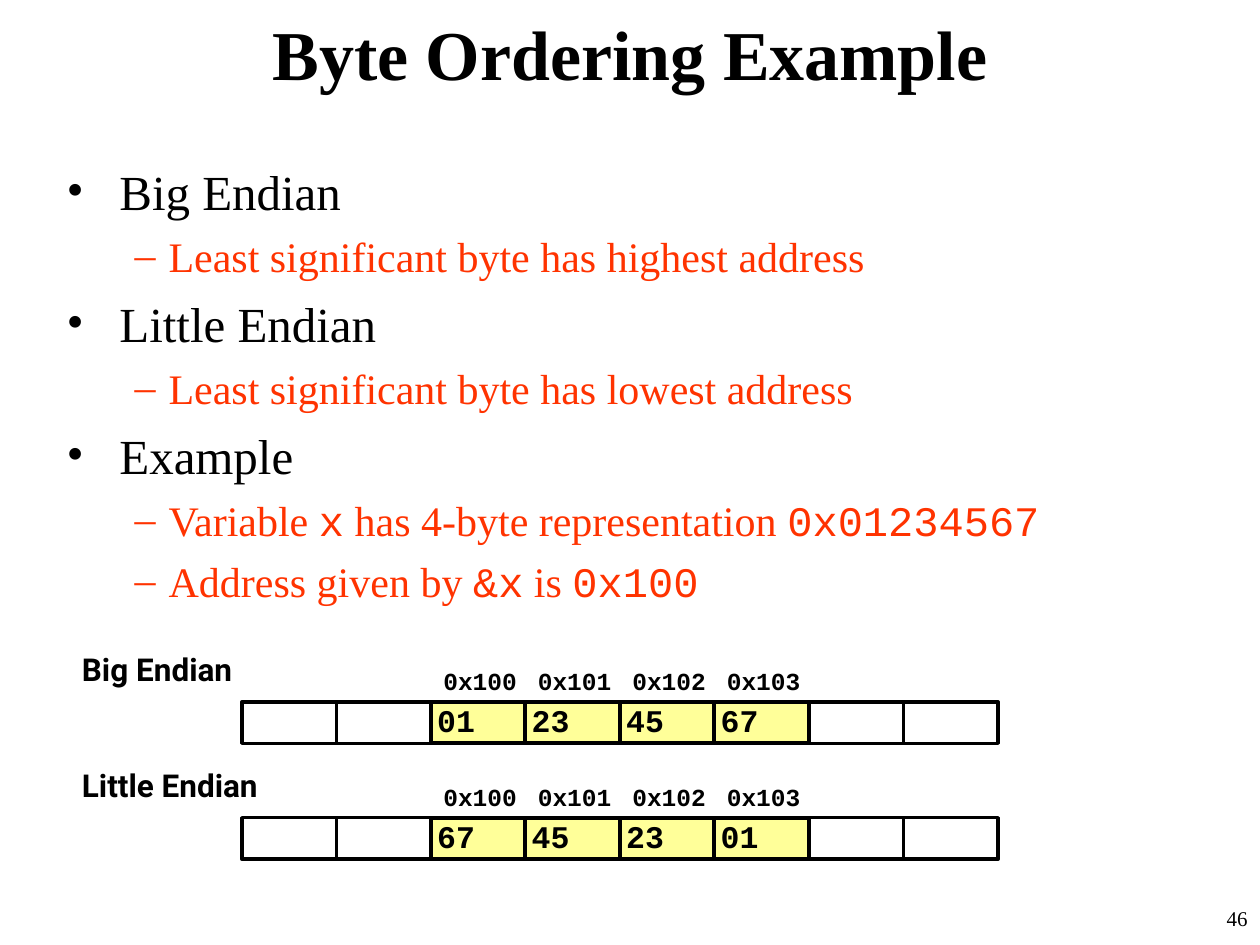
from lxml import etree
from pptx import Presentation
from pptx import util as u
from pptx.dml.color import RGBColor
from pptx.enum import shapes, text
from pptx.oxml.ns import qn

EMU_PER_PX = 9144  # 100 px to the inch
COLORS = {"ink": "000000", "paper": "FFFFFF", "accent": "FF3300", "byte": "FFFF99"}
SERIF, MONO, SANS = "Times New Roman", "Courier New", "Roboto"
LEFT, CENTER, RIGHT = text.PP_ALIGN.LEFT, text.PP_ALIGN.CENTER, text.PP_ALIGN.RIGHT

CELL_W, CELL_H = 75, 33
MEMORY_LEFT, CELL_COUNT, FIRST_BYTE = 192, 8, 2
ADDRESSES = ["0x100", "0x101", "0x102", "0x103"]
MEMORY_ROWS = [
    ("Big Endian", 557, ["01", "23", "45", "67"]),
    ("Little Endian", 649, ["67", "45", "23", "01"]),
]
LEVELS = [
    {"bullet": "•", "margin": 42, "indent": -42, "size": 28, "color": "ink", "before": 7},
    {"bullet": "–", "margin": 81, "indent": -27, "size": 24, "color": "accent", "before": 6},
]
OUTLINE = [
    (0, [("Big Endian", SERIF)]),
    (1, [("Least significant byte has highest address", SERIF)]),
    (0, [("Little Endian", SERIF)]),
    (1, [("Least significant byte has lowest address", SERIF)]),
    (0, [("Example", SERIF)]),
    (1, [("Variable ", SERIF), ("x", MONO), (" has 4-byte representation ", SERIF),
         ("0x01234567", MONO)]),
    (1, [("Address given by ", SERIF), ("&x", MONO), (" is ", SERIF), ("0x100", MONO)]),
]


def px(length):
    return u.Emu(length * EMU_PER_PX)


def apply(target, values):
    for name, value in values.items():
        setattr(target, name, value)


class SlideBuilder:
    def __init__(self, slide):
        self.slide = slide

    def frame(self, shape, inset=(10, 5), **values):
        """Set margins (across, down) and any other text frame values."""
        across, down = map(px, inset)
        apply(shape.text_frame, {
            "margin_left": across, "margin_right": across,
            "margin_top": down, "margin_bottom": down, **values})
        return shape.text_frame

    def run(self, paragraph, words, font, size, color="ink", bold=False):
        run = paragraph.add_run()
        run.text = words
        apply(run.font, {"name": font, "size": u.Pt(size), "bold": bold})
        run.font.color.rgb = RGBColor.from_string(COLORS[color])

    def label(self, box, words, font, size, align=LEFT, bold=True, spacing=1.0, **values):
        shape = self.slide.shapes.add_textbox(*map(px, box))
        paragraph = self.frame(shape, word_wrap=True, **values).paragraphs[0]
        apply(paragraph, {"alignment": align, "line_spacing": spacing})
        self.run(paragraph, words, font, size, bold=bold)

    def outline(self, box, items):
        shape = self.slide.shapes.add_textbox(*map(px, box))
        frame = self.frame(shape, word_wrap=True)
        for index, (level, runs) in enumerate(items):
            style = LEVELS[level]
            paragraph = frame.add_paragraph() if index else frame.paragraphs[0]
            apply(paragraph, {"level": level, "space_before": u.Pt(style["before"])})
            props = paragraph._p.get_or_add_pPr()
            props.set("marL", str(px(style["margin"])))
            props.set("indent", str(px(style["indent"])))
            etree.SubElement(props, qn("a:buFont")).set("typeface", SERIF)
            etree.SubElement(props, qn("a:buChar")).set("char", style["bullet"])
            for words, font in runs:
                self.run(paragraph, words, font, style["size"], style["color"])

    def cell(self, parent, column, top, words="", fill="paper", line=None,
             size=18, inset=(10, 5), spacing=1.0):
        """Add one memory cell, placed by its column in the row."""
        box = (MEMORY_LEFT + column * CELL_W, top, CELL_W, CELL_H)
        shape = parent.shapes.add_shape(shapes.MSO_SHAPE.RECTANGLE, *map(px, box))
        shape.shadow.inherit = False
        shape.fill.solid()
        shape.fill.fore_color.rgb = RGBColor.from_string(COLORS[fill])
        if line:
            shape.line.color.rgb = RGBColor.from_string(COLORS["ink"])
            shape.line.width = u.Pt(line)
        else:
            shape.line.fill.background()
        if words:
            frame = self.frame(shape, inset, word_wrap=False,
                               vertical_anchor=text.MSO_ANCHOR.MIDDLE)
            paragraph = frame.paragraphs[0]
            apply(paragraph, {"alignment": LEFT, "line_spacing": spacing})
            self.run(paragraph, words, MONO, size, bold=True)

    def memory_row(self, name, top, byte_values):
        backdrop = self.slide.shapes.add_group_shape()
        byte_columns = range(FIRST_BYTE, FIRST_BYTE + len(byte_values))
        for column, address in zip(byte_columns, ADDRESSES):
            self.cell(backdrop, column, top - CELL_H, address, size=14)
        for column in range(CELL_COUNT):
            if column not in byte_columns:
                self.cell(backdrop, column, top, line=2)
        self.label((58, top - 42, 195, 34), name, SANS, 18, spacing=0.95, inset=(7, 3))
        for column, value in zip(byte_columns, byte_values):
            self.cell(self.slide, column, top, value, fill="byte", line=2.25,
                      inset=(5, 5), spacing=0.9)


def main():
    deck = Presentation()
    apply(deck, {"slide_width": px(1000), "slide_height": px(750)})
    builder = SlideBuilder(deck.slides.add_slide(deck.slide_layouts[6]))
    builder.label((792, 714, 208, 36), "46", SERIF, 12, RIGHT, bold=False)
    builder.label((0, 0, 1000, 84), "Byte Ordering Example", SERIF, 40, CENTER,
                  vertical_anchor=text.MSO_ANCHOR.MIDDLE)
    builder.outline((43, 123, 906, 544), OUTLINE)
    for row in MEMORY_ROWS:
        builder.memory_row(*row)
    deck.save("out.pptx")


if __name__ == "__main__":
    main()
